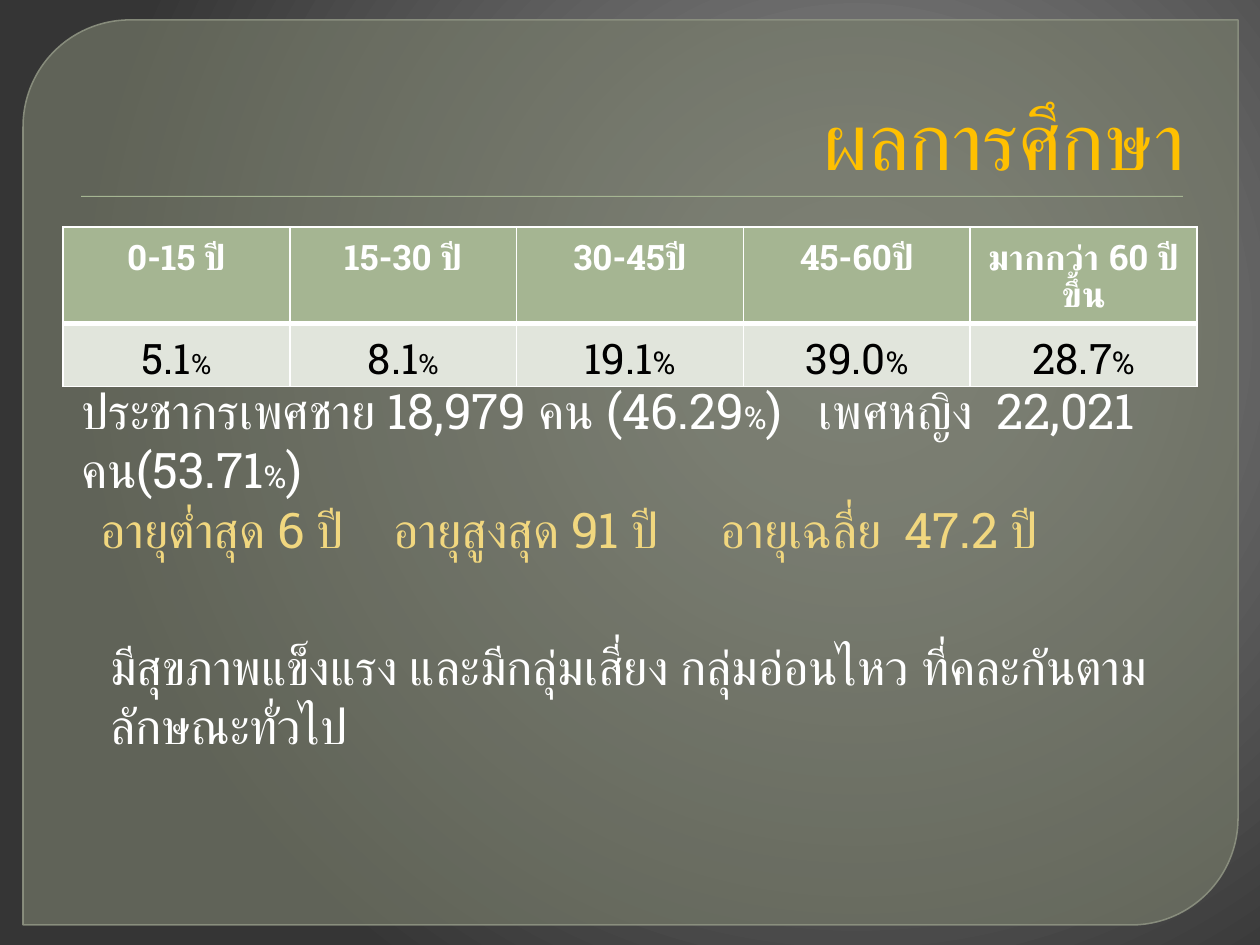
from lxml.etree import SubElement as Sub, fromstring
from pptx import Presentation
from pptx.dml.color import RGBColor as Rgb
from pptx.enum.shapes import MSO_SHAPE as Shape
from pptx.enum.text import MSO_ANCHOR as Anchor, PP_ALIGN as Align
from pptx.oxml.ns import nsdecls, qn
from pptx.util import Emu, Pt

FONT = "Roboto Slab"
HUE = {
    "panel": "787D6B", "edge": "8F9483", "sage": "A5B592", "pale": "E1E5DC",
    "gold": "FFC000", "sand": "F1D77F", "white": "FFFFFF", "black": "000000",
}
GLOW = [(0, "8C8C8C"), (20, "7F7F7F"), (100, "353535")]
AGES = [
    ("0-15 ปี", "5.1", 16),
    ("15-30 ปี", "8.1", 16),
    ("30-45ปี", "19.1", 18),
    ("45-60ปี", "39.0", 18),
    ("มากกว่า 60 ปีขึ้น", "28.7", 18),
]
NOTES = [
    ((69, 374, 1131, 72), "white", (737, 915),
     [("ประชากรเพศชาย 18,979 คน (46.29", 28), ("%", 18),
      (")\tเพศหญิง\t22,021 คน(53.71", 28), ("%", 18), (")", 28)]),
    ((88, 493, 1103, 72), "sand", (293, 620, 804),
     [("อายุต่ำสุด 6 ปี\tอายุสูงสุด 91 ปี\tอายุเฉลี่ย\t47.2 ปี", 28)]),
    ((98, 630, 1063, 72), "white", (),
     [("มีสุขภาพแข็งแรง และมีกลุ่มเสี่ยง กลุ่มอ่อนไหว ที่คละกันตามลักษณะทั่วไป", 28)]),
]


def px(n):
    return Emu(round(n * 914400 / 126))


def place(box):
    return [px(n) for n in box]


def color(name):
    return Rgb.from_string(HUE[name])


def write(para, runs, hue, align=Align.LEFT, bold=False):
    """Add (text, size) runs to a paragraph."""
    para.alignment = align
    for text, size in runs:
        run = para.add_run()
        run.text = text
        look = {"name": FONT, "size": Pt(size), "bold": bold}
        for key, value in look.items():
            setattr(run.font, key, value)
        run.font.color.rgb = color(hue)


def set_tabs(para, stops):
    tabs = Sub(para._p.get_or_add_pPr(), qn("a:tabLst"))
    for stop in stops:
        Sub(tabs, qn("a:tab"), pos=str(px(stop)), algn="l")


def backdrop(slide):
    stops = "".join(
        f'<a:gs pos="{at * 1000}"><a:srgbClr val="{hue}"/></a:gs>' for at, hue in GLOW)
    slide.element.cSld.insert(0, fromstring(
        f'<p:bg {nsdecls("p", "a")}><p:bgPr><a:gradFill rotWithShape="1">'
        f'<a:gsLst>{stops}</a:gsLst><a:path path="circle">'
        '<a:fillToRect l="68000" t="35000" r="32000" b="65000"/></a:path>'
        '</a:gradFill><a:effectLst/></p:bgPr></p:bg>'))


def solid(slide, kind, box, hue):
    shape = slide.shapes.add_shape(kind, *place(box))
    shape.shadow.inherit = False
    shape.fill.solid()
    shape.fill.fore_color.rgb = color(hue)
    shape.line.fill.background()
    return shape


def fade(fill, share):
    for tint in fill.iter(qn("a:srgbClr")):
        Sub(tint, qn("a:alpha"), val=str(share * 1000))


def frame(slide, box):
    panel = solid(slide, Shape.ROUND_2_DIAG_RECTANGLE, box, "panel")
    panel.adjustments[0] = 0.118
    panel.adjustments[1] = 0
    panel.line.color.rgb = color("edge")
    panel.line.width = Pt(0.87)
    props = panel.element.spPr
    fade(props.find(qn("a:solidFill")), 65)
    fade(props.find(qn("a:ln")), 88)


def label(slide, box, runs, hue, align=Align.LEFT, anchor=Anchor.TOP):
    text = slide.shapes.add_textbox(*place(box)).text_frame
    for key, value in {"word_wrap": True, "vertical_anchor": anchor}.items():
        setattr(text, key, value)
    para = text.paragraphs[0]
    write(para, runs, hue, align)
    return para


def border(cell, base):
    """Draw white sides, with the bottom one base points wide."""
    props = cell._tc.get_or_add_tcPr()
    for side, width in {"L": 1, "R": 1, "T": 1, "B": base}.items():
        line = Sub(props, qn(f"a:ln{side}"), w=str(Pt(width)))
        Sub(Sub(line, qn("a:solidFill")), qn("a:srgbClr"), val=HUE["white"])


def fill_cell(cell, runs, hue, back, bold, base):
    border(cell, base)
    cell.fill.solid()
    cell.fill.fore_color.rgb = color(back)
    write(cell.text_frame.paragraphs[0], runs, hue, Align.CENTER, bold)


def age_table(slide, box):
    table = slide.shapes.add_table(2, len(AGES), *place(box)).table
    for col, (span, share, size) in enumerate(AGES):
        fill_cell(table.cell(0, col), [(span, 20)], "white", "sage", True, 3)
        fill_cell(table.cell(1, col), [(share, 24), ("%", size)],
                  "black", "pale", False, 1)


def main():
    deck = Presentation()
    deck.slide_width, deck.slide_height = px(1260), px(945)
    slide = deck.slides.add_slide(deck.slide_layouts[6])
    backdrop(slide)
    frame(slide, (23, 20, 1215, 905))
    solid(slide, Shape.RECTANGLE, (81, 196, 1102, 1), "sage")
    label(slide, (63, 35, 1134, 158), [("ผลการศึกษา", 46)], "gold",
          Align.RIGHT, Anchor.BOTTOM)
    age_table(slide, (63, 227, 1134, 104))
    for box, hue, stops, runs in NOTES:
        para = label(slide, box, runs, hue)
        if stops:
            set_tabs(para, stops)
    deck.save("out.pptx")


if __name__ == "__main__":
    main()
